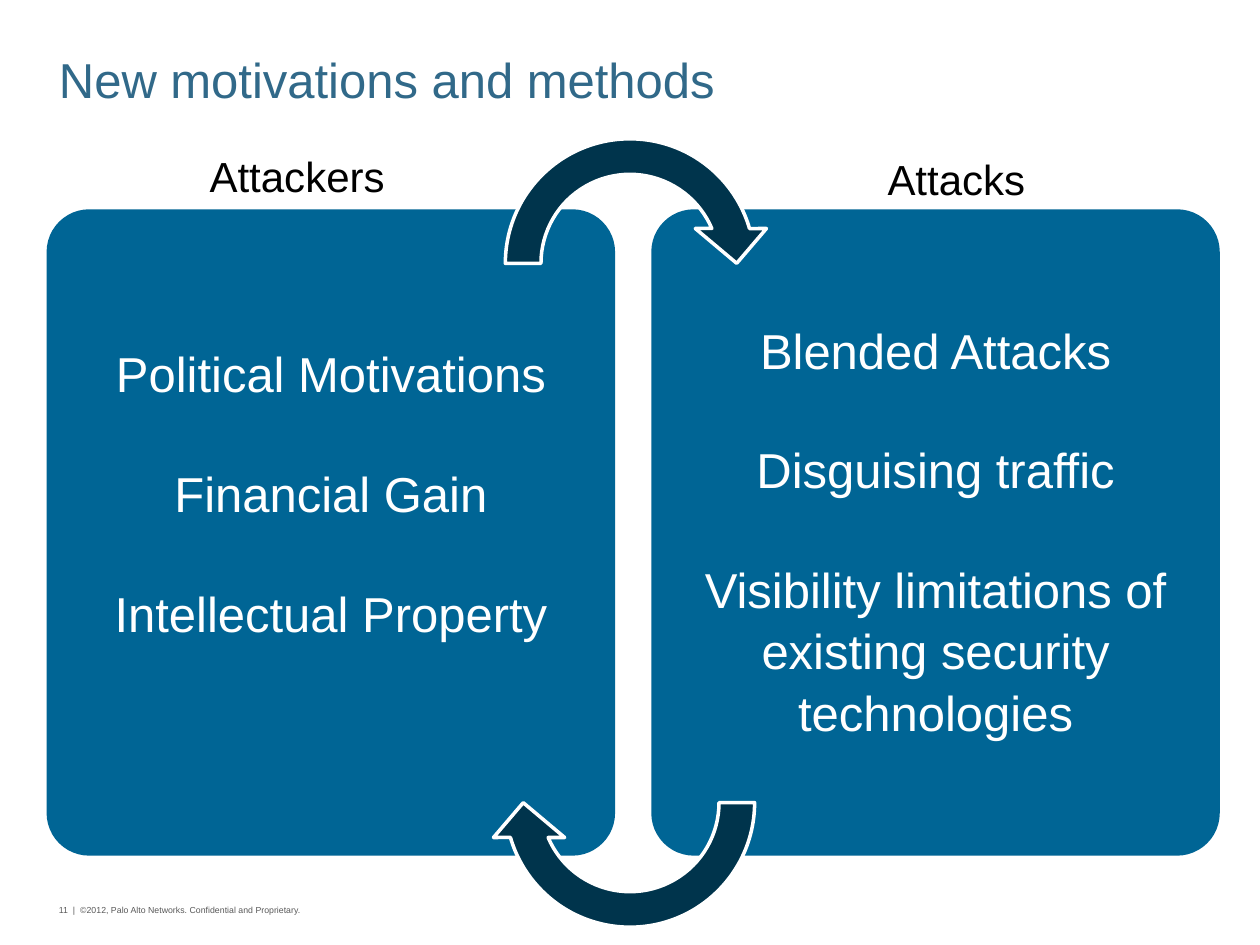
from dataclasses import dataclass

from pptx import Presentation
from pptx.dml.color import RGBColor
from pptx.enum.shapes import MSO_SHAPE
from pptx.enum.text import MSO_ANCHOR, PP_ALIGN
from pptx.util import Cm, Pt


@dataclass(frozen=True)
class Theme:
    font: str = "Arial"
    title: str = "316989"
    footer: str = "595959"
    panel: str = "006595"
    arrow: str = "00344C"
    white: str = "FFFFFF"
    black: str = "000000"
    title_size: float = 28
    panel_size: float = 28
    label_size: float = 24
    footer_size: float = 5
    panel_gap: float = 33.5
    panel_leading: float = 1.04


class Deck:
    def __init__(self, prs, theme):
        self.theme = theme
        self.s = prs.slides.add_slide(prs.slide_layouts[6])

    def style(self, p, size, color, align=PP_ALIGN.LEFT):
        p.alignment = align
        for r in p.runs:
            r.font.name = self.theme.font
            r.font.size = Pt(size)
            r.font.color.rgb = RGBColor.from_string(color)

    def shape(self, kind, box, fill):
        sp = self.s.shapes.add_shape(kind, *map(Cm, box))
        sp.shadow.inherit = False
        sp.fill.solid()
        sp.fill.fore_color.rgb = RGBColor.from_string(fill)
        return sp

    def text(self, text, box, size, color):
        tf = self.s.shapes.add_textbox(*map(Cm, box)).text_frame
        tf.word_wrap = True
        tf.vertical_anchor = MSO_ANCHOR.MIDDLE
        tf.text = text
        self.style(tf.paragraphs[0], size, color)

    def label(self, text, box):
        tf = self.s.shapes.add_textbox(*map(Cm, box)).text_frame
        tf.word_wrap = False
        tf.text = text
        self.style(tf.paragraphs[0], self.theme.label_size, self.theme.black, PP_ALIGN.CENTER)

    def panel(self, items, box, bottom=0.25):
        sp = self.shape(MSO_SHAPE.ROUNDED_RECTANGLE, box, self.theme.panel)
        sp.adjustments[0] = 0.075
        sp.line.fill.background()
        tf = sp.text_frame
        tf.word_wrap = True
        tf.vertical_anchor = MSO_ANCHOR.MIDDLE
        tf.margin_bottom = Cm(bottom)
        for i, item in enumerate(items):
            p = tf.add_paragraph() if i else tf.paragraphs[0]
            p.text = item
            p.line_spacing = self.theme.panel_leading
            if i:
                p.space_before = Pt(self.theme.panel_gap)
            self.style(p, self.theme.panel_size, self.theme.white, PP_ALIGN.CENTER)

    def cycle_arrow(self, box, rotation=0):
        sp = self.shape(MSO_SHAPE.CIRCULAR_ARROW, box, self.theme.arrow)
        for i, value in enumerate((0.125, 11.423, 204.577, 108, 0.125)):
            sp.adjustments[i] = value
        sp.line.color.rgb = RGBColor.from_string(self.theme.white)
        sp.line.width = Pt(2)
        sp.rotation = rotation


def main():
    prs = Presentation()
    prs.slide_width, prs.slide_height = Cm(25.4), Cm(19.05)
    theme = Theme()
    deck = Deck(prs, theme)
    left = 0.94

    deck.text("New motivations and methods", (left, 0.76, 23.44, 1.68),
              theme.title_size, theme.title)
    deck.text("11  |  ©2012, Palo Alto Networks. Confidential and Proprietary.",
              (left, 17.83, 7.49, 1.02), theme.footer_size, theme.footer)

    panel_top, panel_size = 4.22, (11.46, 13.03)
    deck.panel(["Blended Attacks", "Disguising traffic",
                "Visibility limitations of existing security technologies"],
               (13.13, panel_top, *panel_size))
    deck.panel(["Political Motivations", "Financial Gain", "Intellectual Property"],
               (left, panel_top, *panel_size), bottom=1.77)

    arrow = 5.74
    arrow_left = (25.4 - arrow) / 2
    deck.cycle_arrow((arrow_left, 2.44, arrow, arrow))
    deck.cycle_arrow((arrow_left, 19.05 - arrow, arrow, arrow), rotation=180)

    deck.label("Attackers", (3.96, 2.9, 4.06, 1.27))
    deck.label("Attacks", (17.63, 2.97, 3.3, 1.27))

    prs.save("out.pptx")


if __name__ == "__main__":
    main()
